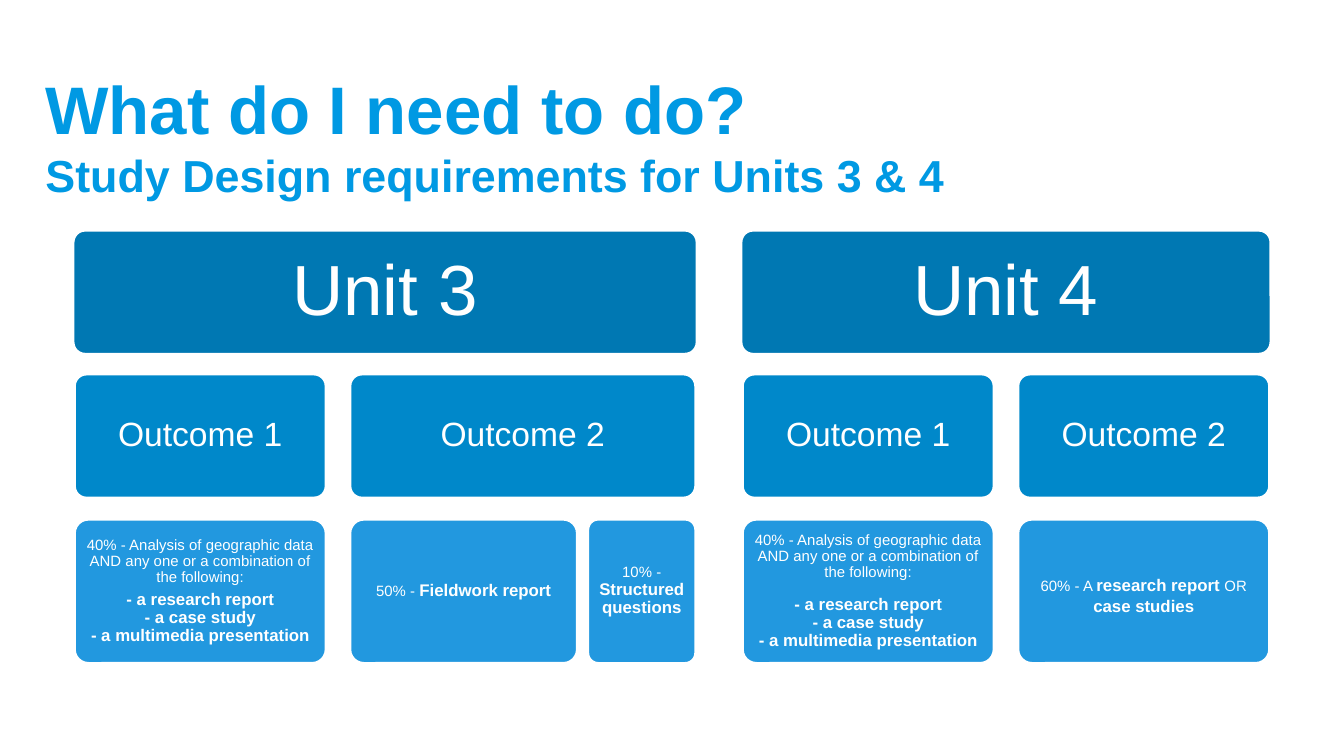
from lxml import etree
from pptx import Presentation
from pptx import util as u
from pptx.dml.color import RGBColor
from pptx.enum import shapes, text
from pptx.oxml.ns import qn

THEME = {
    "font": "Arial", "title": "0099E3", "white": "FFFFFF",
    "title_size": 36, "subtitle_size": 24,
    "unit_size": 38, "outcome_size": 18, "small": 8, "strong": 9, "wide_space": 16,
}
SMALL, STRONG = (THEME["small"], False), (THEME["strong"], True)

# A paragraph is a list of (text, (size, bold)) runs; "\n" is a line break.
TITLE = [[
    ("What do I need to do?\n", (THEME["title_size"], True)),
    ("Study Design requirements for Units 3 & 4", (THEME["subtitle_size"], True)),
]]
ANALYSIS = [
    [("40% - Analysis of geographic data AND any one or a combination of the following:", SMALL)],
    [("- a research report\n- a case study\n- a multimedia presentation", STRONG)],
]
FIELDWORK = [[("50% - ", SMALL), ("Fieldwork report", STRONG)]]
QUESTIONS = [[("10% - ", SMALL), ("Structured questions", STRONG)]]
REPORT = [[
    ("60% - A ", SMALL), ("research report ", STRONG), ("OR", SMALL),
    (" ", (THEME["wide_space"], False)), ("case studies", STRONG),
]]

# Units hold outcomes, outcomes hold tasks: (width, paragraphs, space between paragraphs)
UNITS = [
    ("Unit 3", [
        ("Outcome 1", [(1.88, ANALYSIS, 2.8)]),
        ("Outcome 2", [(1.7, FIELDWORK, 0), (0.81, QUESTIONS, 0)]),
    ]),
    ("Unit 4", [
        ("Outcome 1", [(1.88, ANALYSIS, 8)]),
        ("Outcome 2", [(1.88, REPORT, 0)]),
    ]),
]

# Rows: top, height, fill, text margin
UNIT_ROW = (1.71, 0.93, "0078B3", 0.16)
OUTCOME_ROW = (2.78, 0.93, "0088CA", 0.07)
TASK_ROW = (3.86, 1.08, "2298DF", 0.03)
LEFT, UNIT_GAP, OUTCOME_GAP, TASK_GAP = 0.55, 0.34, 0.17, 0.07
UNIT_OVERHANG = 0.01


def color(name):
    return RGBColor.from_string(THEME.get(name, name))


def add_break(paragraph, size):
    """Add a line break that is no taller than its own line of text."""
    paragraph.add_line_break()
    line_break = paragraph._p.findall(qn("a:br"))[-1]
    etree.SubElement(line_break, qn("a:rPr"), sz=str(size * 100))


def write(frame, paragraphs, font_color, align, line_spacing=1.0, gap=0):
    frame.word_wrap = True
    frame.vertical_anchor = text.MSO_ANCHOR.MIDDLE
    for index, runs in enumerate(paragraphs):
        paragraph = frame.add_paragraph() if index else frame.paragraphs[0]
        paragraph.alignment = align
        paragraph.line_spacing = line_spacing
        paragraph.space_before = u.Pt(gap if index else 0)
        for words, (size, bold) in runs:
            for number, line in enumerate(words.split("\n")):
                if number:
                    add_break(paragraph, size)
                if line:
                    run = paragraph.add_run()
                    run.text = line
                    run.font.name = THEME["font"]
                    run.font.size = u.Pt(size)
                    run.font.bold = bold
                    run.font.color.rgb = color(font_color)


def add_card(slide, left, right, row, paragraphs, gap=0):
    top, height, fill, margin = row
    card = slide.shapes.add_shape(
        shapes.MSO_SHAPE.ROUNDED_RECTANGLE,
        u.Inches(left), u.Inches(top), u.Inches(right - left), u.Inches(height))
    card.adjustments[0] = 0.1
    card.shadow.inherit = False
    card.fill.solid()
    card.fill.fore_color.rgb = color(fill)
    card.line.color.rgb = color("white")
    card.line.width = u.Pt(2)
    frame = card.text_frame
    frame.margin_left = frame.margin_right = u.Inches(margin)
    frame.margin_top = frame.margin_bottom = u.Inches(margin)
    write(frame, paragraphs, "white", text.PP_ALIGN.CENTER, 0.9, gap)


def add_units(slide):
    unit_left = LEFT
    for unit, outcomes in UNITS:
        outcome_left = unit_left
        for outcome, tasks in outcomes:
            task_left = outcome_left
            for width, paragraphs, gap in tasks:
                right = task_left + width
                add_card(slide, task_left, right, TASK_ROW, paragraphs, gap)
                task_left = right + TASK_GAP
            label = [[(outcome, (THEME["outcome_size"], False))]]
            add_card(slide, outcome_left, right, OUTCOME_ROW, label)
            outcome_left = right + OUTCOME_GAP
        label = [[(unit, (THEME["unit_size"], False))]]
        add_card(slide, unit_left - UNIT_OVERHANG, right + UNIT_OVERHANG, UNIT_ROW, label)
        unit_left = right + UNIT_GAP


def main():
    presentation = Presentation()
    presentation.slide_width = u.Inches(10)
    presentation.slide_height = presentation.slide_width * 9 // 16
    slide = presentation.slides.add_slide(presentation.slide_layouts[6])
    title = slide.shapes.add_textbox(
        u.Inches(0.24), u.Inches(0.53), u.Inches(9.53), u.Inches(0.94))
    write(title.text_frame, TITLE, "title", text.PP_ALIGN.LEFT)
    add_units(slide)
    presentation.save("out.pptx")


if __name__ == "__main__":
    main()
